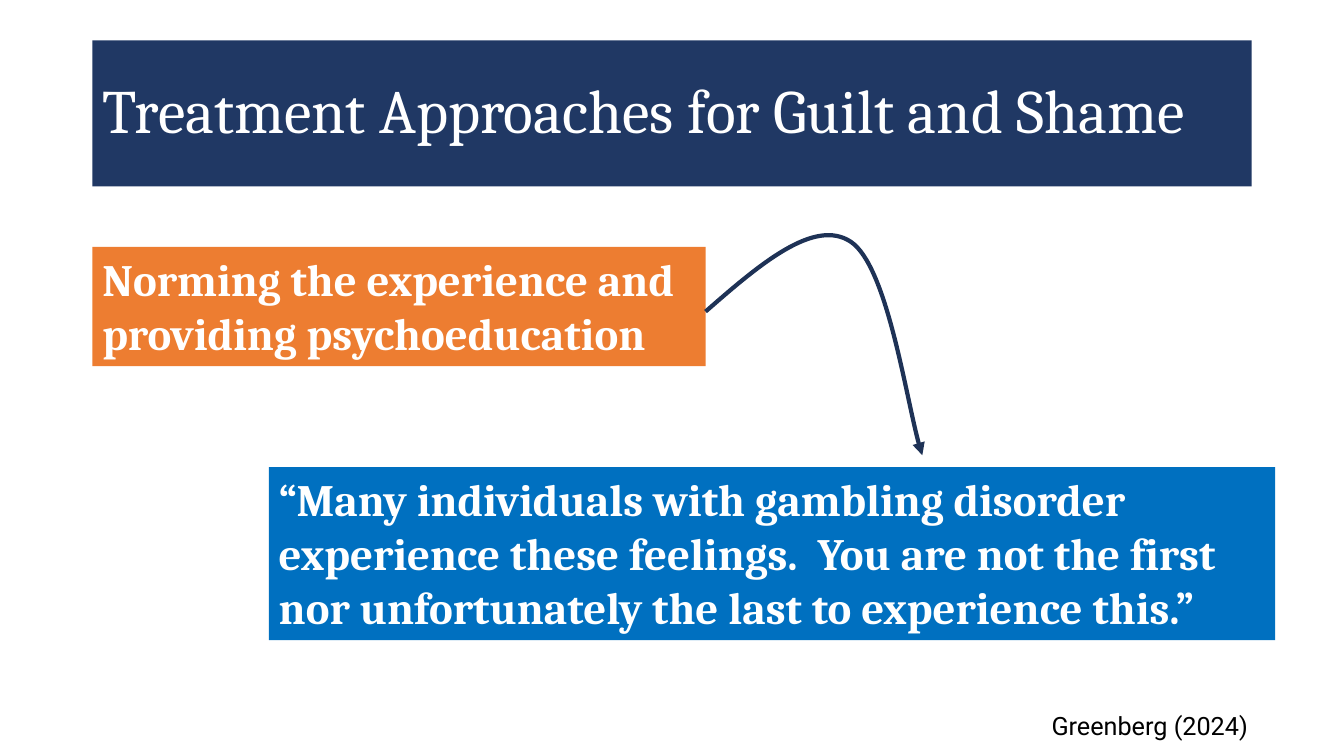
import pptx
import pptx.dml.color
import pptx.enum.shapes
import pptx.enum.text
import pptx.oxml
import pptx.oxml.ns
import pptx.util

NAVY = pptx.dml.color.RGBColor(0x20, 0x38, 0x64)
ORANGE = pptx.dml.color.RGBColor(0xED, 0x7D, 0x31)
BLUE = pptx.dml.color.RGBColor(0x00, 0x70, 0xC0)
ARROW = pptx.dml.color.RGBColor(0x1E, 0x32, 0x56)
WHITE = pptx.dml.color.RGBColor(0xFF, 0xFF, 0xFF)
BLACK = pptx.dml.color.RGBColor(0x00, 0x00, 0x00)

COLUMNS, ROWS = 160, 90
MARGIN = 11


def write_text(shape, text, size=32, font="Cambria", color=WHITE, bold=False,
               align=pptx.enum.text.PP_ALIGN.LEFT,
               anchor=pptx.enum.text.MSO_ANCHOR.TOP, line_spacing=1.0):
    frame = shape.text_frame
    frame.word_wrap = True
    frame.auto_size = pptx.enum.text.MSO_AUTO_SIZE.NONE
    frame.vertical_anchor = anchor
    paragraph = frame.paragraphs[0]
    paragraph.alignment = align
    paragraph.line_spacing = line_spacing
    run = paragraph.add_run()
    run.text = text
    run.font.size = pptx.util.Pt(size)
    run.font.name = font
    run.font.bold = bold
    run.font.color.rgb = color


class SlideBuilder:
    def __init__(self, presentation):
        self.column = presentation.slide_width / COLUMNS
        self.row = presentation.slide_height / ROWS
        self.slide = presentation.slides.add_slide(presentation.slide_layouts[5])

    def place(self, column, row, columns, rows):
        return (round(column * self.column), round(row * self.row),
                round(columns * self.column), round(rows * self.row))

    def title(self, text, fill, *cell):
        shape = self.slide.shapes.title
        shape.left, shape.top, shape.width, shape.height = self.place(*cell)
        shape.fill.solid()
        shape.fill.fore_color.rgb = fill
        write_text(shape, text, size=44, line_spacing=0.9,
                   anchor=pptx.enum.text.MSO_ANCHOR.MIDDLE)

    def panel(self, text, fill, *cell):
        shape = self.slide.shapes.add_shape(
            pptx.enum.shapes.MSO_SHAPE.RECTANGLE, *self.place(*cell))
        shape.shadow.inherit = False
        shape.fill.solid()
        shape.fill.fore_color.rgb = fill
        shape.line.fill.background()
        write_text(shape, text, bold=True)

    def citation(self, text, *cell):
        shape = self.slide.shapes.add_textbox(*self.place(*cell))
        write_text(shape, text, size=18, font="Roboto", color=BLACK,
                   align=pptx.enum.text.PP_ALIGN.RIGHT)

    def curved_arrow(self, points, color, width):
        start, *controls = [(x * self.column, y * self.row) for x, y in points]
        builder = self.slide.shapes.build_freeform(*start)
        builder.add_line_segments(controls, close=False)
        shape = builder.convert_to_shape()
        shape.shadow.inherit = False
        shape.fill.background()
        shape.line.color.rgb = color
        shape.line.width = pptx.util.Pt(width)
        tail = pptx.oxml.parse_xml(
            f'<a:tailEnd {pptx.oxml.ns.nsdecls("a")} type="triangle"/>')
        shape.line._get_or_add_ln().append(tail)

        segments = shape._element.xpath(".//a:lnTo")
        for first in range(0, len(segments), 3):
            curve = pptx.oxml.parse_xml(
                f'<a:cubicBezTo {pptx.oxml.ns.nsdecls("a")}/>')
            segments[first].addprevious(curve)
            for segment in segments[first:first + 3]:
                curve.append(segment[0])
                segment.getparent().remove(segment)


def main():
    presentation = pptx.Presentation()
    presentation.slide_width = pptx.util.Inches(13.33)
    presentation.slide_height = pptx.util.Inches(7.5)
    builder = SlideBuilder(presentation)
    builder.title("Treatment Approaches for Guilt and Shame", NAVY,
                  MARGIN, 4.8, 138, 17.4)
    builder.citation("Greenberg (2024) ", 92, 84, 58.5, 4.8)
    builder.panel("Norming the experience and providing psychoeducation",
                  ORANGE, MARGIN, 29.4, 73, 14.2)
    builder.panel("“Many individuals with gambling disorder experience these "
                  "feelings.  You are not the first nor unfortunately the last "
                  "to experience this.”", BLUE, 32, 55.6, 119.8, 20.6)
    builder.curved_arrow([(84, 37.1), (90.5, 31.4), (97, 25.9), (101.3, 28.8),
                          (105.6, 31.7), (108.2, 49.7), (109.8, 54.2)], ARROW, 3)
    presentation.save("out.pptx")


if __name__ == "__main__":
    main()
